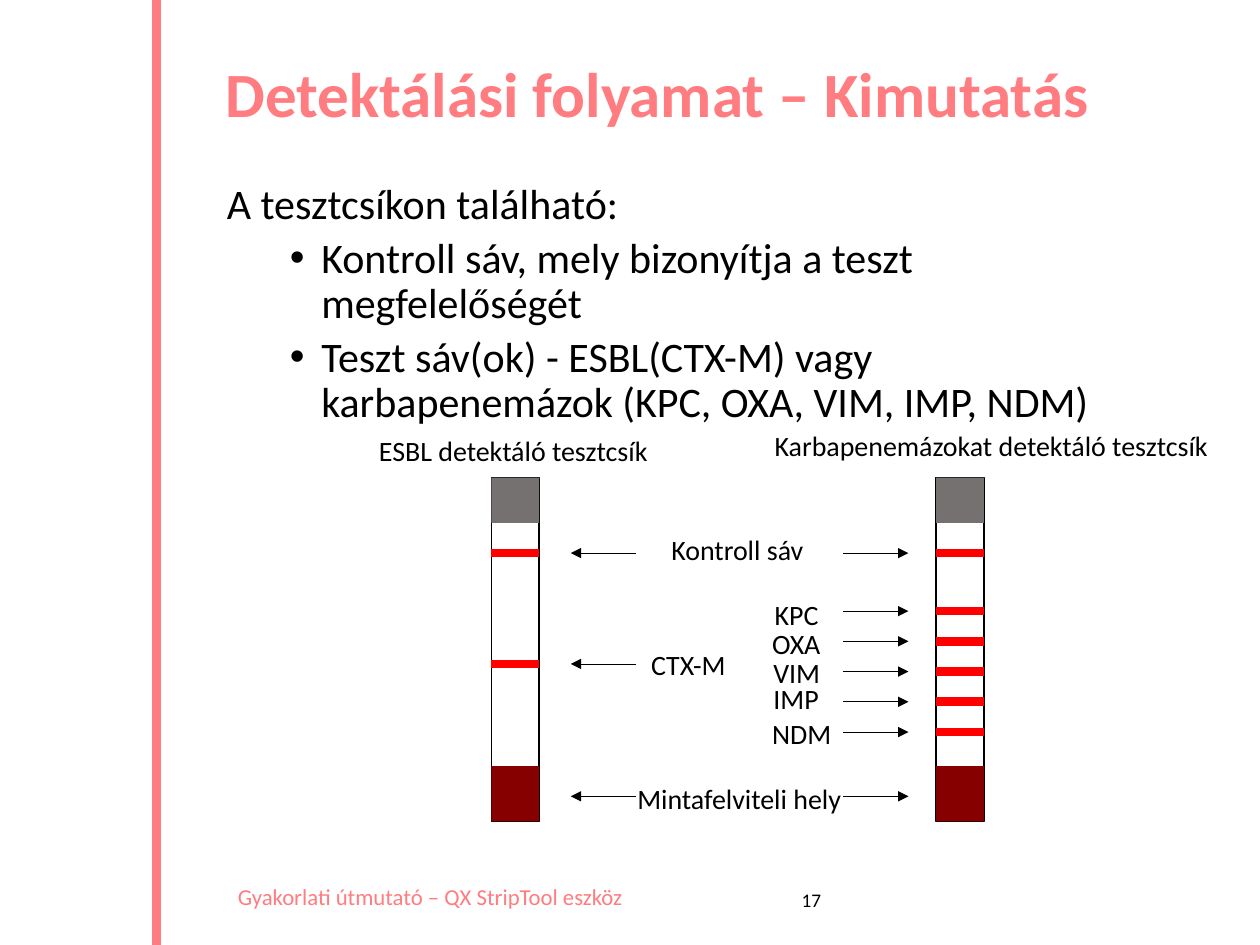
from dataclasses import dataclass

from lxml import etree
from pptx import Presentation
from pptx.dml.color import RGBColor
from pptx.enum.shapes import MSO_CONNECTOR, MSO_SHAPE
from pptx.enum.text import MSO_ANCHOR, MSO_AUTO_SIZE, PP_ALIGN
from pptx.oxml.ns import qn
from pptx.util import Inches, Pt

LINE = MSO_CONNECTOR.STRAIGHT
RECT = MSO_SHAPE.RECTANGLE
TOP = MSO_ANCHOR.TOP
FIXED = MSO_AUTO_SIZE.NONE
LEFT, MID = PP_ALIGN.LEFT, PP_ALIGN.CENTER


@dataclass(frozen=True)
class Theme:
    font: str = "Calibri"
    rose: str = "FF7C80"
    black: str = "000000"
    white: str = "FFFFFF"
    grey: str = "767171"
    red: str = "FF0000"
    wine: str = "860000"
    title: int = 36
    body: int = 24
    label: int = 16
    foot: int = 13
    page: int = 11


THEME = Theme()

# Heights shared by strips, arrows and labels
CTRL, CTX, SAMPLE = 4.39, 5.27, 6.32
GENES = [4.85 + 0.24 * i for i in range(5)]


def place(item, box):
    item.left, item.top, item.width, item.height = map(Inches, box)


def style(para, size, color=THEME.black, bold=False, align=LEFT,
          space=0, lead=1.0):
    para.alignment = align
    para.space_before = Pt(space)
    para.line_spacing = lead
    font = para.font
    font.name, font.size, font.bold = THEME.font, Pt(size), bold
    font.color.rgb = RGBColor.from_string(color)


def write(slide, text, box, wrap=False, **form):
    item = slide.shapes.add_textbox(*map(Inches, box))
    frame = item.text_frame
    frame.word_wrap = wrap
    frame.text = text
    style(frame.paragraphs[0], **form)


def draw(slide, start, end, color, width, arrow=False):
    line = slide.shapes.add_connector(LINE, *map(Inches, start + end))
    line.line.color.rgb = RGBColor.from_string(color)
    line.line.width = Pt(width)
    if arrow:
        tip = etree.SubElement(line.line._get_or_add_ln(), qn("a:tailEnd"))
        tip.set("type", "triangle")
    etree.SubElement(line._element.spPr, qn("a:effectLst"))


def block(slide, box, fill, edge=None):
    item = slide.shapes.add_shape(RECT, *map(Inches, box))
    item.shadow.inherit = False
    item.fill.solid()
    item.fill.fore_color.rgb = RGBColor.from_string(fill)
    if edge:
        item.line.color.rgb = RGBColor.from_string(edge)
        item.line.width = Pt(1)
    else:
        item.line.fill.background()


def set_mark(para, mark=None):
    props = para._p.get_or_add_pPr()
    props.set("marL", str(Inches(0.75 if mark else 0)))
    props.set("indent", str(Inches(-0.25 if mark else 0)))
    if mark:
        etree.SubElement(props, qn("a:buFont")).set("typeface", "Arial")
        etree.SubElement(props, qn("a:buChar")).set("char", mark)
    else:
        etree.SubElement(props, qn("a:buNone"))


def add_title(slide, box):
    item = slide.shapes.title
    place(item, box)
    frame = item.text_frame
    frame.text = "Detektálási folyamat – Kimutatás"
    frame.vertical_anchor, frame.auto_size = TOP, FIXED
    style(frame.paragraphs[0], THEME.title, THEME.rose, bold=True, lead=0.9)


def add_body(slide, box):
    item = slide.placeholders[1]
    place(item, box)
    frame = item.text_frame
    frame.text = "\n".join([
        "A tesztcsíkon található:",
        "Kontroll sáv, mely bizonyítja a teszt megfelelőségét",
        "Teszt sáv(ok) - ESBL(CTX-M) vagy karbapenemázok "
        "(KPC, OXA, VIM, IMP, NDM)",
    ])
    frame.vertical_anchor, frame.auto_size = TOP, FIXED
    for i, para in enumerate(frame.paragraphs):
        para.level = min(i, 1)
        set_mark(para, "•" if i else None)
        style(para, THEME.body, space=5 if i else 0, lead=0.9)


def add_strip(slide, box, bands):
    x, y, w, h = box
    foot = 0.44
    block(slide, box, THEME.white, THEME.black)
    block(slide, (x, y, w, 0.36), THEME.grey)
    block(slide, (x, y + h - foot, w, foot), THEME.wine)
    for row in bands:
        draw(slide, (x, row), (x + w, row), THEME.red, 5)


def add_key(slide, box):
    """Labels and arrows in the gap between the two strips."""
    x, y, w, h = box
    reach = 0.52
    for row in (CTRL, CTX, SAMPLE):
        draw(slide, (x + reach, row), (x, row), THEME.black, 0.5, True)
    for row in (CTRL, *GENES, SAMPLE):
        draw(slide, (x + w - reach, row), (x + w, row),
             THEME.black, 0.5, True)
    # Text, then offset from the box and width
    labels = [
        ("Kontroll sáv", 0.7, 0.39, 1.26),
        ("CTX-M", 0.54, 1.3, 0.81),
        ("KPC", 1.52, 0.9, 0.55),
        ("OXA", 1.5, 1.13, 0.59),
        ("VIM", 1.51, 1.36, 0.66),
        ("IMP", 1.51, 1.57, 0.56),
        ("NDM", 1.5, 1.85, 0.68),
        ("Mintafelviteli hely", 0.43, 2.36, 1.84),
    ]
    for text, dx, dy, wide in labels:
        write(slide, text, (x + dx, y + dy, wide, 0.37), size=THEME.label)


def add_chrome(slide, box):
    """Side rule, footer and page number."""
    x, y, w, h = box
    draw(slide, (x + 1.24, y + h), (x + 1.24, y), THEME.rose, 5)
    write(slide, "Gyakorlati útmutató – QX StripTool eszköz",
          (x + 1.79, y + h - 0.54, 3.5, 0.32), wrap=True,
          size=THEME.foot, color=THEME.rose)
    write(slide, "17", (x + 6.22, y + h - 0.5, 0.44, 0.29), wrap=True,
          size=THEME.page, align=MID)


def main():
    deck = Presentation()
    deck.slide_width, deck.slide_height = Inches(10), Inches(7.5)
    slide = deck.slides.add_slide(deck.slide_layouts[1])

    add_chrome(slide, (0, 0, 10, 7.5))
    add_title(slide, (1.69, 0.45, 7.63, 0.93))
    add_body(slide, (1.7, 1.4, 7.62, 2.2))

    # Test strips and their headings
    add_strip(slide, (3.9, 3.79, 0.38, 2.73), (CTRL, CTX))
    add_strip(slide, (7.43, 3.79, 0.38, 2.73), (CTRL, *GENES))
    add_key(slide, (4.53, 3.79, 2.68, 2.73))
    write(slide, "ESBL detektáló tesztcsík", (2.91, 3.39, 2.36, 0.37),
          size=THEME.label)
    write(slide, "Karbapenemázokat detektáló tesztcsík",
          (6.05, 3.35, 3.69, 0.37), size=THEME.label)

    deck.save("out.pptx")


if __name__ == "__main__":
    main()
